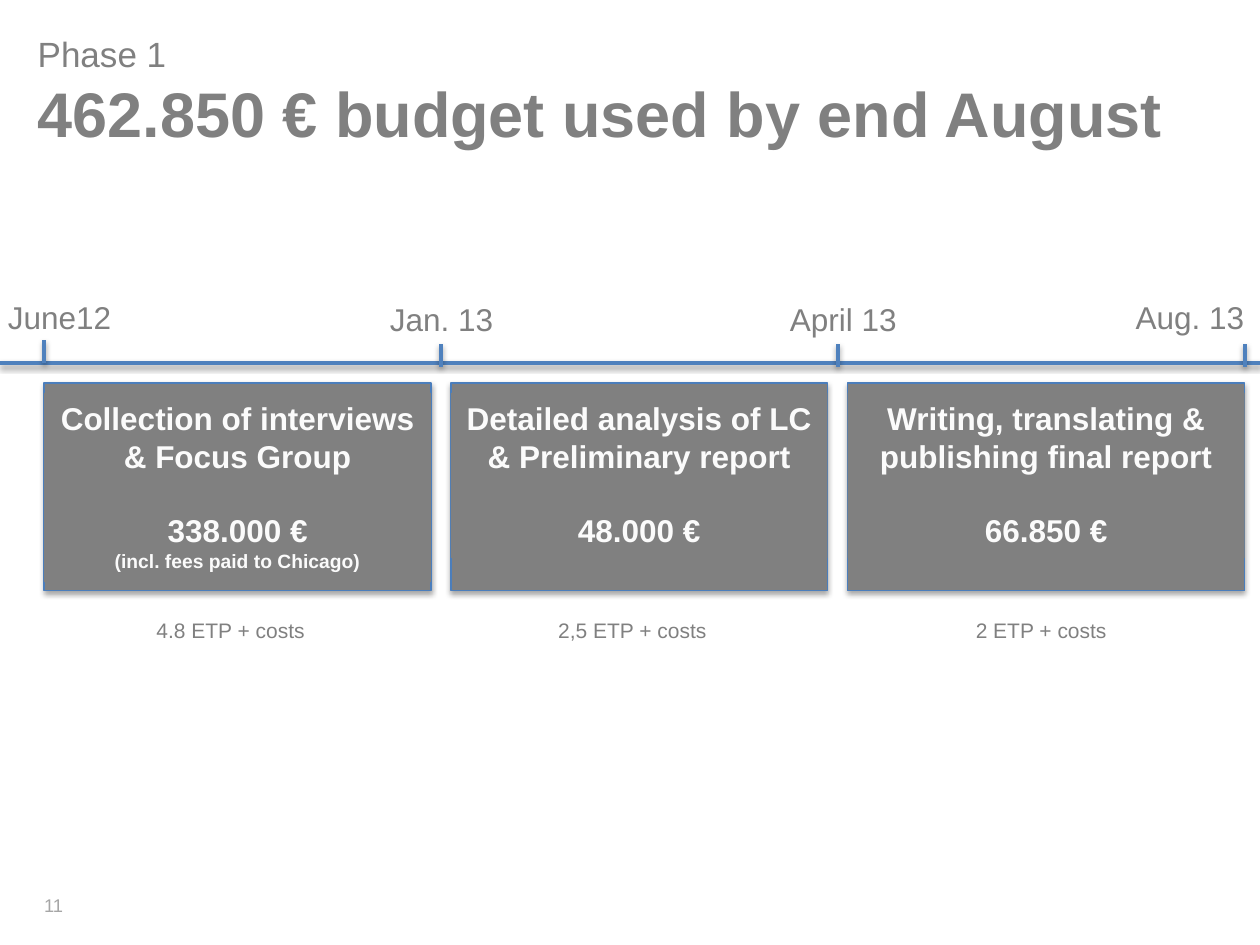
from lxml import etree
from pptx import Presentation
from pptx.dml.color import RGBColor
from pptx.enum.shapes import MSO_CONNECTOR, MSO_SHAPE
from pptx.enum.text import MSO_ANCHOR, PP_ALIGN
from pptx.oxml.ns import qn
from pptx.util import Cm, Pt

LEFT, CENTER, RIGHT = PP_ALIGN.LEFT, PP_ALIGN.CENTER, PP_ALIGN.RIGHT
TOP, MIDDLE = MSO_ANCHOR.TOP, MSO_ANCHOR.MIDDLE
RECT, STRAIGHT = MSO_SHAPE.RECTANGLE, MSO_CONNECTOR.STRAIGHT

GREY, PALE_GREY, OFF_WHITE = "808080", "A6A6A6", "FBFBFB"
BLUE, EDGE_BLUE = "4F81BD", "4B7EBC"
AXIS_Y, PANEL_TOP, PANEL_HEIGHT = 7.32, 7.72, 4.19

# left, width, height of text, task, budget, note
PHASES = [
    (0.89, 7.8, 3.81, "Collection of interviews & Focus Group",
     "338.000 €", "(incl. fees paid to Chicago)"),
    (9.09, 7.59, 3.33, "Detailed analysis of LC & Preliminary report",
     "48.000 €", None),
    (17.09, 8.0, 3.33, "Writing, translating & publishing final report",
     "66.850 €", None),
]
# label, label left, top and width, tick x and bottom
DATES = [
    ("June12", -0.3, 5.89, 3.0, 0.89, AXIS_Y),
    ("Jan. 13", 7.49, 5.92, 2.82, 8.89, 7.39),
    ("April 13", 15.49, 5.92, 3.02, 16.89, 7.39),
    ("Aug. 13", 22.48, 5.89, 3.02, 25.1, 7.39),
]
# text, left, width
COSTS = [
    ("4.8 ETP + costs ", 0.71, 8.0),
    ("2,5 ETP + costs", 8.89, 7.72),
    ("2 ETP + costs", 16.89, 8.2),
]


def rgb(color):
    return RGBColor.from_string(color)


def add_shadow(sp, alpha, distance):
    """Give a shape or connector a soft black shadow straight below it."""
    effects = etree.SubElement(sp._element.spPr, qn("a:effectLst"))
    shadow = etree.SubElement(effects, qn("a:outerShdw"), blurRad=str(Pt(3.1)),
                              dist=str(Pt(distance)), dir="5400000", rotWithShape="0")
    black = etree.SubElement(shadow, qn("a:srgbClr"), val="000000")
    etree.SubElement(black, qn("a:alpha"), val=str(alpha * 1000))


def add_line(s, x1, y1, x2, y2):
    line = s.shapes.add_connector(STRAIGHT, Cm(x1), Cm(y1), Cm(x2), Cm(y2))
    line.line.color.rgb = rgb(BLUE)
    line.line.width = Pt(2)
    add_shadow(line, 38, 1.6)


def add_rect(s, left, top, width, height):
    sp = s.shapes.add_shape(RECT, Cm(left), Cm(top), Cm(width), Cm(height))
    sp.fill.solid()
    sp.fill.fore_color.rgb = rgb(GREY)
    return sp


def add_textbox(s, left, top, width, height, anchor=TOP):
    tf = s.shapes.add_textbox(Cm(left), Cm(top), Cm(width), Cm(height)).text_frame
    tf.word_wrap = True
    tf.vertical_anchor = anchor
    return tf


def write(tf, text, size, color=GREY, bold=False, align=LEFT, before=0):
    """Fill the first paragraph if it is free, otherwise append one."""
    p = tf.paragraphs[0] if not tf.text else tf.add_paragraph()
    p.alignment = align
    p.space_before = Pt(before)
    r = p.add_run()
    r.text = text
    r.font.name = "Arial"
    r.font.size = Pt(size)
    r.font.bold = bold
    r.font.color.rgb = rgb(color)


def add_phase(s, left, width, text_height, task, budget, note):
    panel = add_rect(s, left, PANEL_TOP, width, PANEL_HEIGHT)
    panel.line.color.rgb = rgb(EDGE_BLUE)
    panel.line.width = Pt(0.75)
    add_shadow(panel, 35, 1.8)

    content = add_rect(s, left, PANEL_TOP + 0.2, width, text_height)
    content.line.fill.background()
    content.shadow.inherit = False
    tf = content.text_frame
    tf.word_wrap = True
    tf.vertical_anchor = TOP
    style = {"color": OFF_WHITE, "bold": True, "align": CENTER}
    write(tf, task, 18, **style)
    write(tf, budget, 18, before=21, **style)
    if note:
        write(tf, note, 11, **style)


def add_date(s, label, left, top, width, tick_x, tick_bottom):
    write(add_textbox(s, left, top, width, 1.02), label, 18, align=CENTER)
    add_line(s, tick_x, tick_bottom, tick_x, tick_bottom - 0.46)


def main():
    prs = Presentation()
    prs.slide_width, prs.slide_height = Cm(25.4), Cm(19.05)
    s = prs.slides.add_slide(prs.slide_layouts[6])

    number = add_textbox(s, 0.3, 17.73, 1.22, 1.02, anchor=MIDDLE)
    write(number, "11", 10.5, color=PALE_GREY, align=RIGHT)
    title = add_textbox(s, 0.51, 0.53, 24.2, 2.64)
    write(title, "Phase 1", 20)
    write(title, "462.850 € budget used by end August", 36, bold=True)

    add_line(s, 0, AXIS_Y, 25.4, AXIS_Y)
    for date in DATES:
        add_date(s, *date)
    for phase in PHASES:
        add_phase(s, *phase)
    for text, left, width in COSTS:
        write(add_textbox(s, left, 12.32, width, 0.76), text, 12, align=CENTER)

    prs.save("out.pptx")


if __name__ == "__main__":
    main()
